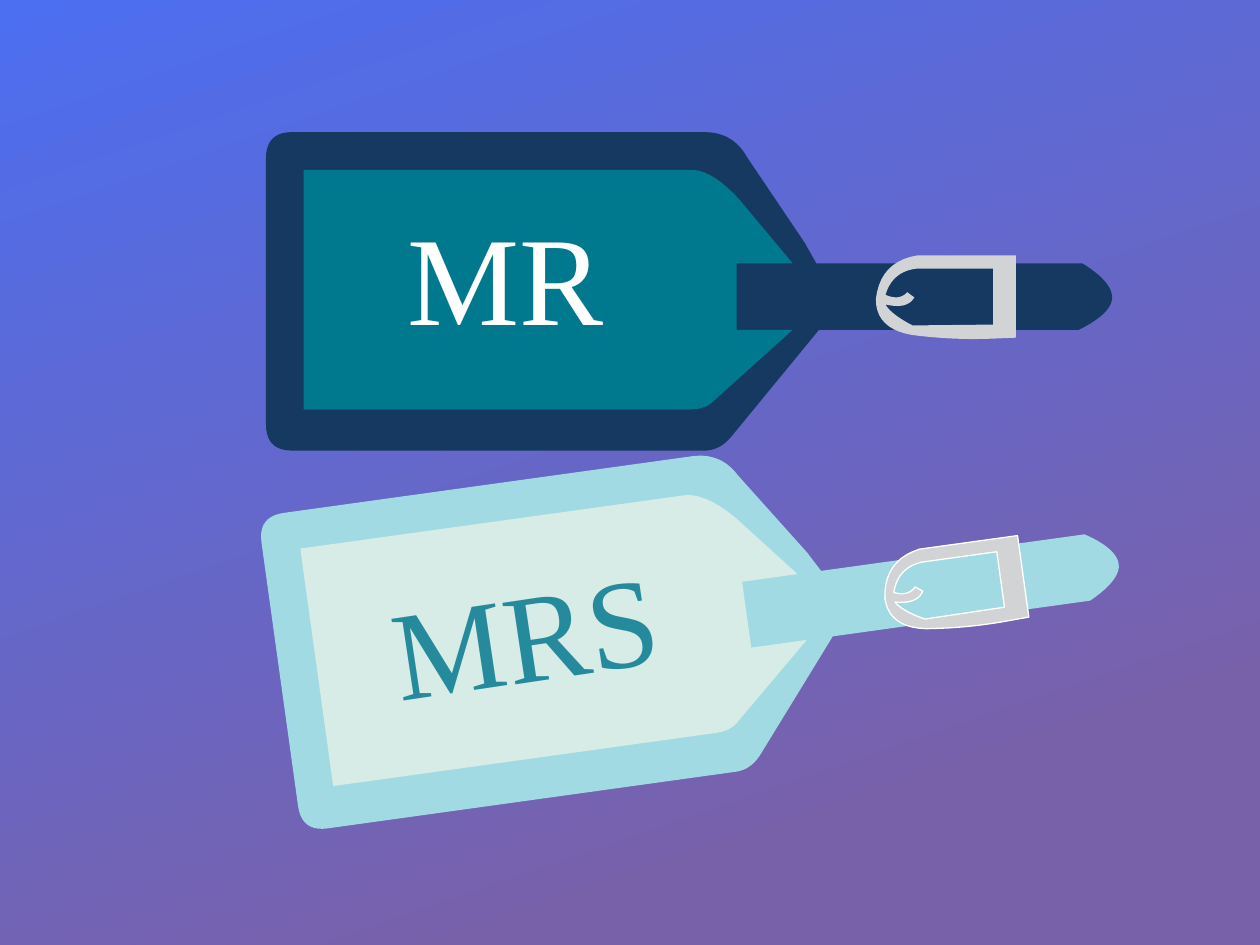
import math

from pptx import Presentation
from pptx.dml.color import RGBColor
from pptx.enum import shapes, text
from pptx.util import Pt

WIDTH, HEIGHT = 720, 540
SKY = [("4C6EF0", 0), ("7961AA", 0.81)]
SILVER = "D1D3D4"

TAGS = [
    dict(name="MR", leather="163961", card="00788D", ink="FFFFFF", edge=None,
         pivot=(402.5, 257.5), tilt=0, label=(226, 110.5), label_tilt=0),
    dict(name="MRS", leather="A1DAE3", card="D7ECE6", ink="268A9D", edge="FFFFFF",
         pivot=(420.5, 441), tilt=-7.9, label=(216, 304.6), label_tilt=-8.6),
]

# Main edges of the upright tag
LEFT, TOP, BOTTOM, CORNER = 152, 75.5, 257.5, 15
SHOULDER = 402.5                                # where the straight sides end
STRAP_TOP, STRAP_BOTTOM, STRAP_LEFT, TIP = 150.5, 188.5, 421, 635.5
CARD_LEFT, CARD_TOP, CARD_BOTTOM, CARD_NOTCH = 173.5, 97, 234, 453
RIM_LEFT, RIM_RIGHT, RIM_TOP, RIM_BOTTOM = 500.5, 580.5, 146, 193
HOLE_LEFT, HOLE_RIGHT, HOLE_TOP, HOLE_BOTTOM = 506, 567.5, 153.5, 185.5
PIVOT = (SHOULDER, BOTTOM)

# Each step is a line (end) or a curve (control, end)
LEATHER = [
    [(LEFT + CORNER, TOP)],
    [(SHOULDER, TOP)],
    [(419, TOP), (427, 90)],                          # upper shoulder
    [(460, 139)],
    [(466.5, STRAP_TOP)],
    [(618.5, STRAP_TOP)],
    [(TIP, 161), (TIP, 170)],                         # strap tip
    [(TIP, 179), (616.5, STRAP_BOTTOM)],
    [(468, STRAP_BOTTOM)],
    [(417.5, 250)],
    [(411, BOTTOM), (SHOULDER, BOTTOM)],              # lower shoulder
    [(LEFT + CORNER, BOTTOM)],
    [(LEFT, BOTTOM), (LEFT, BOTTOM - CORNER)],
    [(LEFT, TOP + CORNER)],
    [(LEFT, TOP), (LEFT + CORNER, TOP)],
]
CARD = [
    [(CARD_LEFT, CARD_TOP)],
    [(396, CARD_TOP)],
    [(408, 98), (422.5, 114)],
    [(CARD_NOTCH, STRAP_TOP)],
    [(STRAP_LEFT, STRAP_TOP)],
    [(STRAP_LEFT, STRAP_BOTTOM)],
    [(CARD_NOTCH, STRAP_BOTTOM)],
    [(408, 229)],
    [(403, CARD_BOTTOM), (394.5, CARD_BOTTOM)],
    [(CARD_LEFT, CARD_BOTTOM)],
]
BUCKLE_RIM = [
    [(RIM_RIGHT, RIM_TOP)],
    [(RIM_RIGHT, RIM_BOTTOM)],
    [(568, 193.5)],
    [(545, 194.5), (521.5, 191.5)],
    [(RIM_LEFT, 188), (RIM_LEFT, 171)],
    [(503, 149.5), (524, RIM_TOP)],
]
BUCKLE_HOLE = [
    [(524, HOLE_TOP)],
    [(510, 155), (HOLE_LEFT, 168.5)],
    [(514, 172), (518.5, 167)],                       # prong, upper side
    [(522.5, 170)],
    [(518.5, 177), (HOLE_LEFT, 174)],                 # prong, lower side
    [(509, 179.5), (521.5, 186)],
    [(HOLE_RIGHT, HOLE_BOTTOM)],
    [(HOLE_RIGHT, HOLE_TOP)],
]

# Parts from back to front: contours, and the tag's keys for fill and edge
PARTS = [
    ([LEATHER], "leather", None),
    ([CARD], "card", None),
    ([BUCKLE_RIM, BUCKLE_HOLE], None, "edge"),
]


def color(value):
    return RGBColor.from_string(value)


def trace(steps, pieces=10):
    """Turn steps into points, cutting each quadratic curve into pieces."""
    points = []
    for *control, end in steps:
        if control:
            (x0, y0), (x1, y1), (x2, y2) = points[-1], control[0], end
            for i in range(1, pieces):
                t = i / pieces
                a, b, c = (1 - t) ** 2, 2 * t * (1 - t), t ** 2
                points.append((a * x0 + b * x1 + c * x2, a * y0 + b * y1 + c * y2))
        points.append(end)
    return points


def place(points, pivot, tilt):
    """Turn points about PIVOT by tilt degrees and move PIVOT to pivot."""
    cos, sin = math.cos(math.radians(tilt)), math.sin(math.radians(tilt))
    offsets = [(x - PIVOT[0], y - PIVOT[1]) for x, y in points]
    return [(Pt(pivot[0] + x * cos - y * sin), Pt(pivot[1] + x * sin + y * cos))
            for x, y in offsets]


def add_outline(s, contours, fill, edge=None):
    """Draw one shape; contours after the first are holes."""
    first, *holes = contours
    builder = s.shapes.build_freeform(*first[0])
    builder.add_line_segments(first[1:], close=True)
    for hole in holes:
        builder.move_to(*hole[0])
        builder.add_line_segments(hole[1:], close=True)
    sp = builder.convert_to_shape()
    sp.shadow.inherit = False
    sp.fill.solid()
    sp.fill.fore_color.rgb = color(fill)
    if edge:
        sp.line.color.rgb = color(edge)
        sp.line.width = Pt(0)
    else:
        sp.line.fill.background()


def add_label(s, words, left, top, *, ink, tilt=0, size=72, font="Times New Roman"):
    sp = s.shapes.add_textbox(Pt(left), Pt(top), Pt(298), Pt(93.6))
    sp.rotation = tilt
    tf = sp.text_frame
    tf.word_wrap = True
    tf.auto_size = text.MSO_AUTO_SIZE.SHAPE_TO_FIT_TEXT
    r = tf.paragraphs[0].add_run()
    r.text = words
    r.font.name, r.font.size = font, Pt(size)
    r.font.color.rgb = color(ink)


def add_sky(s):
    sp = s.shapes.add_shape(shapes.MSO_SHAPE.RECTANGLE, 0, 0, Pt(WIDTH), Pt(HEIGHT + 1.4))
    sp.shadow.inherit = False
    sp.line.fill.background()
    sp.fill.gradient()
    sp.fill.gradient_angle = 360 - 71  # counted counter-clockwise
    for stop, (value, position) in zip(sp.fill.gradient_stops, SKY):
        stop.color.rgb = color(value)
        stop.position = position


def add_tag(s, tag):
    for contours, fill, edge in PARTS:
        placed = [place(trace(c), tag["pivot"], tag["tilt"]) for c in contours]
        add_outline(s, placed, tag.get(fill, SILVER), tag.get(edge))


def main():
    prs = Presentation()
    prs.slide_width, prs.slide_height = Pt(WIDTH), Pt(HEIGHT)
    s = prs.slides.add_slide(prs.slide_layouts[6])
    add_sky(s)
    for tag in TAGS:
        add_tag(s, tag)
    for tag in TAGS:
        add_label(s, tag["name"], *tag["label"], ink=tag["ink"], tilt=tag["label_tilt"])
    prs.save("out.pptx")


if __name__ == "__main__":
    main()
